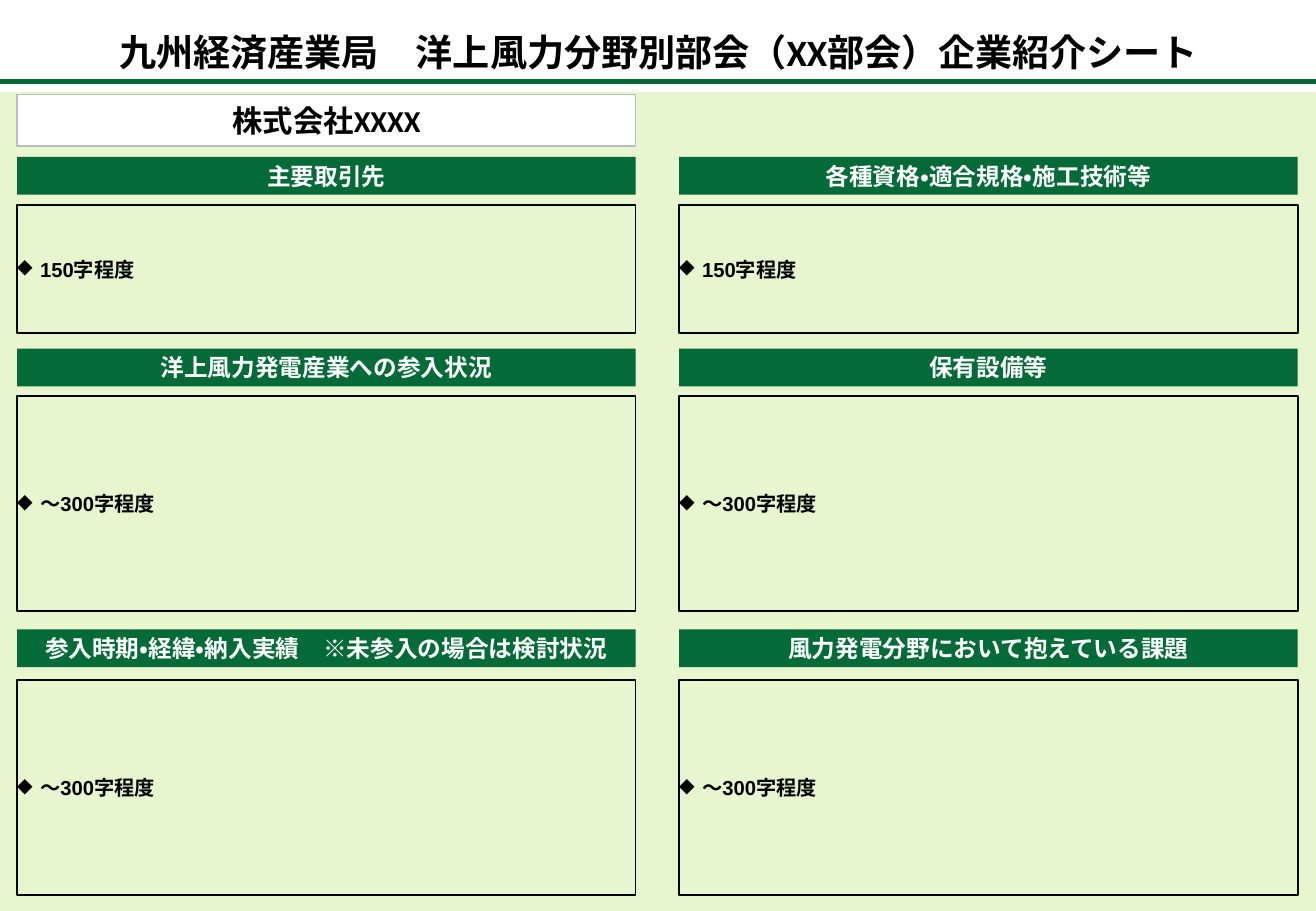
from dataclasses import dataclass

from lxml import etree
from pptx import Presentation
from pptx.dml.color import RGBColor
from pptx.enum.lang import MSO_LANGUAGE_ID
from pptx.enum.shapes import MSO_CONNECTOR, MSO_SHAPE
from pptx.enum.text import MSO_ANCHOR, MSO_AUTO_SIZE, PP_ALIGN
from pptx.oxml.ns import qn
from pptx.util import Cm, Pt

RECTANGLE = MSO_SHAPE.RECTANGLE
STRAIGHT = MSO_CONNECTOR.STRAIGHT
MIDDLE = MSO_ANCHOR.MIDDLE
NO_AUTOFIT = MSO_AUTO_SIZE.NONE
CENTER = PP_ALIGN.CENTER
LEFT = PP_ALIGN.LEFT
JAPANESE = MSO_LANGUAGE_ID.JAPANESE
TITLE_ONLY_LAYOUT = 5


@dataclass(frozen=True)
class Theme:
    green: RGBColor = RGBColor(0x04, 0x6A, 0x38)
    pale: RGBColor = RGBColor(0xE8, 0xF6, 0xCF)
    gray: RGBColor = RGBColor(0xBB, 0xBC, 0xBC)
    black: RGBColor = RGBColor(0, 0, 0)
    white: RGBColor = RGBColor(0xFF, 0xFF, 0xFF)
    heading_font: str = "Calibri"
    body_font: str = "Arial"
    title_size: int = 22
    company_size: int = 18
    banner_size: int = 14
    body_size: int = 12


THEME = Theme()

SLIDE_WIDTH, SLIDE_HEIGHT = 27.51, 19.05
PANEL_TOP = 1.93
RULE_TOP = 1.7
COLUMN_LEFTS = (0.36, 14.2)
COLUMN_WIDTH = 12.93
BANNER_HEIGHT = 0.79
BULLET_INDENT = 0.48

SECTION_ROWS = (
    (3.28, 4.29, 2.67, "150字程度", ("主要取引先", "各種資格・適合規格・施工技術等")),
    (7.29, 8.28, 4.5, "～300字程度", ("洋上風力発電産業への参入状況", "保有設備等")),
    (13.16, 14.22, 4.5, "～300字程度",
     ("参入時期・経緯・納入実績　※未参入の場合は検討状況", "風力発電分野において抱えている課題")),
)


def apply_format(target, values):
    for name, value in values.items():
        setattr(target, name, value)


def write_text(shape, text, size, color, font_name, alignment=CENTER, margin=0):
    inset = Cm(margin)
    frame = shape.text_frame
    apply_format(frame, {
        "word_wrap": True, "auto_size": NO_AUTOFIT, "vertical_anchor": MIDDLE,
        "margin_left": inset, "margin_right": inset,
        "margin_top": inset, "margin_bottom": inset,
    })
    paragraph = frame.paragraphs[0]
    paragraph.alignment = alignment
    run = paragraph.add_run()
    run.text = text
    apply_format(run.font, {
        "name": font_name, "size": Pt(size), "bold": True, "language_id": JAPANESE,
    })
    run.font.color.rgb = color
    return paragraph


def add_rectangle(slide, left, top, width, height, fill, line=None):
    shape = slide.shapes.add_shape(RECTANGLE, Cm(left), Cm(top), Cm(width), Cm(height))
    shape.shadow.inherit = False
    shape.fill.solid()
    shape.fill.fore_color.rgb = fill
    if line is None:
        shape.line.fill.background()
    else:
        shape.line.color.rgb = line
        shape.line.width = Pt(1)
    return shape


def add_bullet(paragraph):
    properties = paragraph._p.get_or_add_pPr()
    properties.set("marL", str(Cm(BULLET_INDENT)))
    properties.set("indent", str(-Cm(BULLET_INDENT)))
    etree.SubElement(properties, qn("a:buChar")).set("char", "◆")


def add_title(slide, text):
    title = slide.shapes.title
    apply_format(title, {
        "left": Cm(1.17), "top": Cm(0.23), "width": Cm(25.2), "height": Cm(1.7),
    })
    write_text(title, text, THEME.title_size, THEME.black, THEME.heading_font)


def add_rule(slide):
    rule = slide.shapes.add_connector(
        STRAIGHT, Cm(0), Cm(RULE_TOP), Cm(SLIDE_WIDTH), Cm(RULE_TOP))
    rule.line.color.rgb = THEME.green
    rule.line.width = Pt(3)
    etree.SubElement(rule._element.spPr, qn("a:effectLst"))


def add_company(slide, text):
    box = add_rectangle(
        slide, COLUMN_LEFTS[0], 1.98, COLUMN_WIDTH, 1.07, THEME.white, THEME.gray)
    write_text(box, text, THEME.company_size, THEME.black, THEME.heading_font)


def add_banner(slide, left, top, text):
    banner = add_rectangle(slide, left, top, COLUMN_WIDTH, BANNER_HEIGHT, THEME.green)
    write_text(banner, text, THEME.banner_size, THEME.white, THEME.heading_font, margin=0.1)


def add_entry_box(slide, left, top, height, text):
    box = add_rectangle(slide, left, top, COLUMN_WIDTH, height, THEME.pale, THEME.black)
    paragraph = write_text(
        box, text, THEME.body_size, THEME.black, THEME.body_font, LEFT)
    add_bullet(paragraph)


def main():
    presentation = Presentation()
    presentation.slide_width = Cm(SLIDE_WIDTH)
    presentation.slide_height = Cm(SLIDE_HEIGHT)
    slide = presentation.slides.add_slide(presentation.slide_layouts[TITLE_ONLY_LAYOUT])

    add_rectangle(slide, 0, PANEL_TOP, SLIDE_WIDTH, SLIDE_HEIGHT - PANEL_TOP, THEME.pale)
    add_rule(slide)
    add_title(slide, "九州経済産業局　洋上風力分野別部会（XX部会）企業紹介シート")
    add_company(slide, "株式会社XXXX")
    for banner_top, box_top, box_height, guide, headings in SECTION_ROWS:
        for left, heading in zip(COLUMN_LEFTS, headings):
            add_banner(slide, left, banner_top, heading)
            add_entry_box(slide, left, box_top, box_height, guide)

    presentation.save("out.pptx")


if __name__ == "__main__":
    main()
